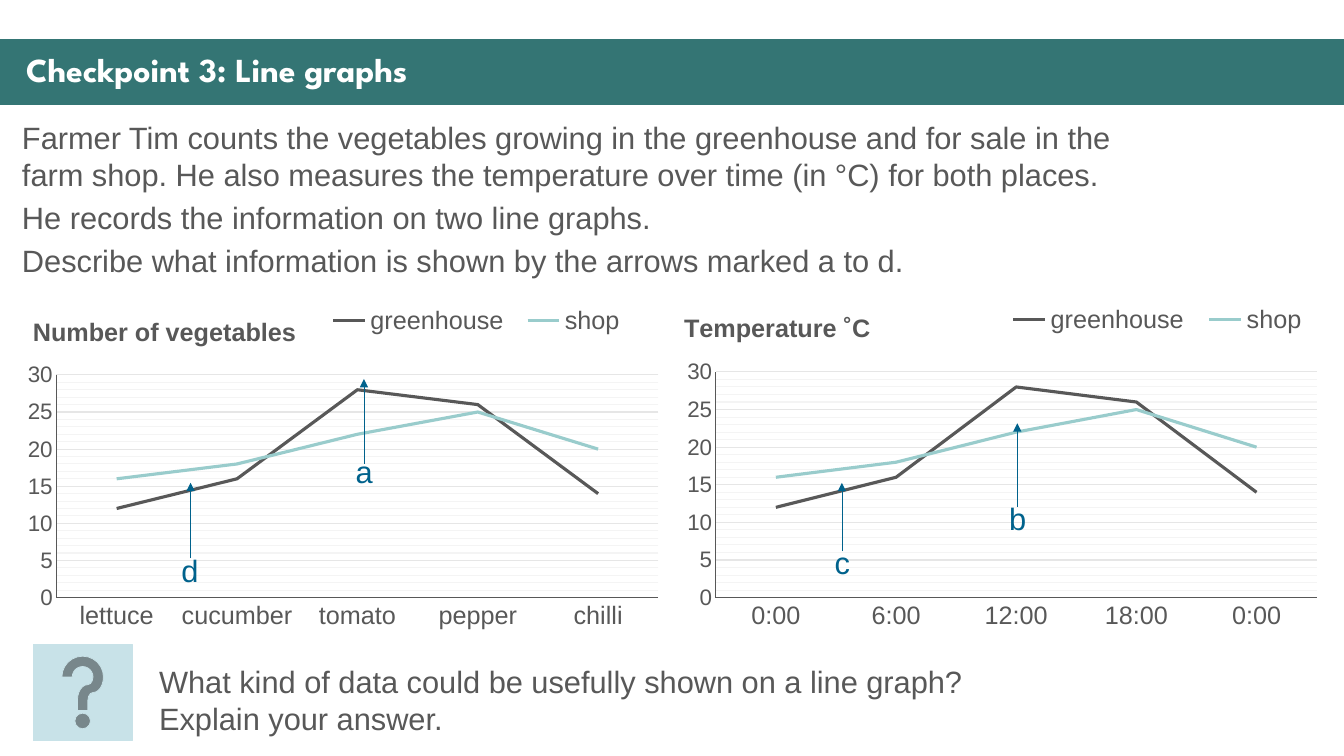
"""Build the line graphs checkpoint slide."""
from lxml.etree import SubElement
from pptx import Presentation
from pptx.chart.data import CategoryChartData
from pptx.dml.color import RGBColor
from pptx.enum.chart import XL_CHART_TYPE, XL_LEGEND_POSITION, XL_TICK_MARK
from pptx.enum.shapes import MSO_CONNECTOR, MSO_SHAPE
from pptx.enum.text import MSO_ANCHOR
from pptx.oxml.ns import qn
from pptx.util import Inches, Pt

GREEN = RGBColor(0x34, 0x75, 0x74)
GREY = RGBColor(0x58, 0x58, 0x58)
AQUA = RGBColor(0x99, 0xCC, 0xCC)
PALE = RGBColor(0xC8, 0xE2, 0xE8)
BLUE = RGBColor(0x00, 0x62, 0x8C)
MAJOR = RGBColor(0xE6, 0xE6, 0xE6)
MINOR = RGBColor(0xF4, 0xF4, 0xF4)
WHITE = RGBColor(0xFF, 0xFF, 0xFF)

HEAD = "Checkpoint 3: Line graphs"
INTRO = [
    "Farmer Tim counts the vegetables growing in the greenhouse and for sale in the "
    "farm shop. He also measures the temperature over time (in °C) for both places.",
    "He records the information on two line graphs.",
    "Describe what information is shown by the arrows marked a to d.",
]
TASK = "What kind of data could be usefully shown on a line graph? Explain your answer."
SERIES = [
    ("greenhouse", (12, 16, 28, 26, 14), GREY),
    ("shop", (16, 18, 22, 25, 20), AQUA),
]
GRAPHS = [
    dict(title="Number of vegetables", box=(0.15, 2.95, 6.51, 3.83),
         cats=("lettuce", "cucumber", "tomato", "pepper", "chilli"),
         name=(0.28, 3.08), key=(3.15, 2.99, 3.15, 0.38),
         plot=(0.56, 3.72, 5.97, 2.21), axis=0.75),
    dict(title="Temperature ˚C", box=(6.68, 2.97, 6.51, 3.81),
         cats=("0:00", "6:00", "12:00", "18:00", "0:00"),
         name=(6.74, 3.04), key=(9.88, 2.98, 3.2, 0.38),
         plot=(7.1, 3.69, 5.96, 2.24), axis=1),
]
MARKS = [
    ("a", 3.61, 4.6, 3.76, 3.43, 4.44),
    ("b", 10.09, 5.03, 4.2, 9.91, 4.91),
    ("c", 8.35, 5.47, 4.79, 8.18, 5.35),
    ("d", 1.89, 5.54, 4.79, 1.7, 5.42),
]


def style(font, size, color=GREY, name="Arial", bold=False):
    font.size, font.name, font.bold = Pt(size), name, bold
    font.color.rgb = color


def write(slide, box, lines, color=GREY, gap=0, wrap=True):
    frame = slide.shapes.add_textbox(*map(Inches, box)).text_frame
    frame.word_wrap = wrap
    for i, line in enumerate(lines):
        para = frame.add_paragraph() if i else frame.paragraphs[0]
        para.space_before = Pt(gap)
        run = para.add_run()
        run.text = line
        style(run.font, 22, color)
    return frame


def block(slide, kind, box, color):
    shape = slide.shapes.add_shape(kind, *map(Inches, box))
    shape.shadow.inherit = False
    shape.fill.solid()
    shape.fill.fore_color.rgb = color
    shape.line.color.rgb = color
    shape.line.width = Pt(0.5)


def place(node, spot, frame, index, inner=False):
    old = node.find(qn("c:layout"))
    if old is not None:
        node.remove(old)
    layout = SubElement(node, qn("c:layout"))
    node.insert(index, layout)
    manual = SubElement(layout, qn("c:manualLayout"))
    rows = [("layoutTarget", "inner")] if inner else []
    rows += [("xMode", "edge"), ("yMode", "edge")]
    left, top, wide, high = frame
    rows += [("x", (spot[0] - left) / wide), ("y", (spot[1] - top) / high)]
    if len(spot) == 4:
        rows += [("w", spot[2] / wide), ("h", spot[3] / high)]
    for tag, value in rows:
        text = value if isinstance(value, str) else f"{value:.4f}"
        SubElement(manual, qn("c:" + tag)).set("val", text)


def rule(line, color, width=0.75):
    line.color.rgb = color
    line.width = Pt(width)


def minor(grid):
    line = SubElement(SubElement(grid, qn("c:spPr")), qn("a:ln"))
    line.set("w", str(Pt(0.75)))
    fill = SubElement(line, qn("a:solidFill"))
    SubElement(fill, qn("a:srgbClr")).set("val", str(MINOR))


def graph(slide, item):
    data = CategoryChartData()
    data.categories = item["cats"]
    for name, vals, _ in SERIES:
        data.add_series(name, vals)
    box = item["box"]
    chart = slide.shapes.add_chart(
        XL_CHART_TYPE.LINE, *map(Inches, box), data).chart
    style(chart.font, 10)
    plot = chart.plots[0]
    plot.vary_by_categories = False
    for line, (_, _, color) in zip(plot.series, SERIES):
        line.smooth = False
        rule(line.format.line, color, 2.25)

    chart.has_title = True
    run = chart.chart_title.text_frame.paragraphs[0].add_run()
    run.text = item["title"]
    style(run.font, 18, bold=True)
    chart.has_legend = True
    chart.legend.position = XL_LEGEND_POSITION.BOTTOM
    chart.legend.include_in_layout = False
    style(chart.legend.font, 18)

    cat, val = chart.category_axis, chart.value_axis
    for axis, size, width in ((cat, 18, item["axis"]), (val, 16, 0.75)):
        axis.major_tick_mark = axis.minor_tick_mark = XL_TICK_MARK.NONE
        style(axis.tick_labels.font, size)
        rule(axis.format.line, GREY, width)
    val.minimum_scale, val.maximum_scale = 0, 30
    val.major_unit, val.minor_unit = 5, 1
    val.has_major_gridlines = val.has_minor_gridlines = True
    rule(val.major_gridlines.format.line, MAJOR)

    root = chart.element
    minor(root.find(".//" + qn("c:minorGridlines")))
    place(root.find(".//" + qn("c:title")), item["name"], box, 1)
    place(root.find(".//" + qn("c:legend")), item["key"], box, 1)
    place(root.find(".//" + qn("c:plotArea")), item["plot"], box, 0, True)


def mark(slide, label, x, start, end, left, top):
    arrow = slide.shapes.add_connector(
        MSO_CONNECTOR.STRAIGHT, *map(Inches, (x, start, x, end)))
    rule(arrow.line, BLUE, 0.5)
    props = arrow.element.spPr
    SubElement(props.find(qn("a:ln")), qn("a:tailEnd")).set("type", "triangle")
    SubElement(props, qn("a:effectLst"))
    write(slide, (left, top, 0.37, 0.47), [label], BLUE, wrap=False)


def main():
    deck = Presentation()
    deck.slide_width, deck.slide_height = Inches(13.33), Inches(7.5)
    slide = deck.slides.add_slide(deck.slide_layouts[6])
    block(slide, MSO_SHAPE.RECTANGLE, (0, 0.39, 13.33, 0.65), GREEN)
    head = write(slide, (0.16, 0.48, 13.04, 0.47), [HEAD])
    head.vertical_anchor = MSO_ANCHOR.MIDDLE
    head.paragraphs[0].line_spacing = 0.9
    style(head.paragraphs[0].runs[0].font, 24, WHITE, "League Spartan", True)
    write(slide, (0.12, 1.13, 11.07, 1.75), INTRO, gap=4.4)
    for item in GRAPHS:
        graph(slide, item)
    for item in MARKS:
        mark(slide, *item)
    write(slide, (1.48, 6.53, 8.83, 0.84), [TASK])
    block(slide, MSO_SHAPE.ACTION_BUTTON_HELP, (0.33, 6.39, 0.98, 0.96), PALE)
    deck.save("out.pptx")


if __name__ == "__main__":
    main()
